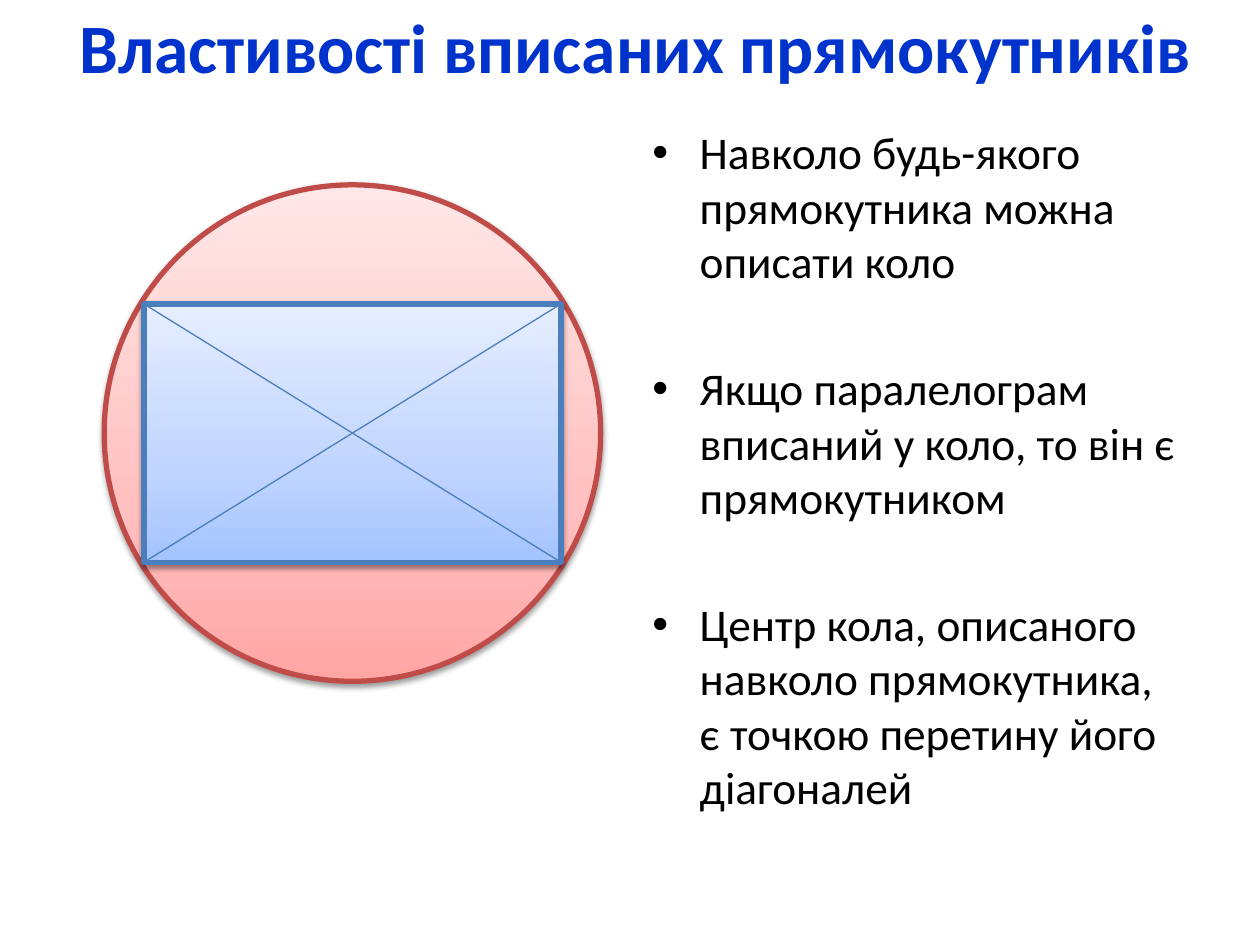
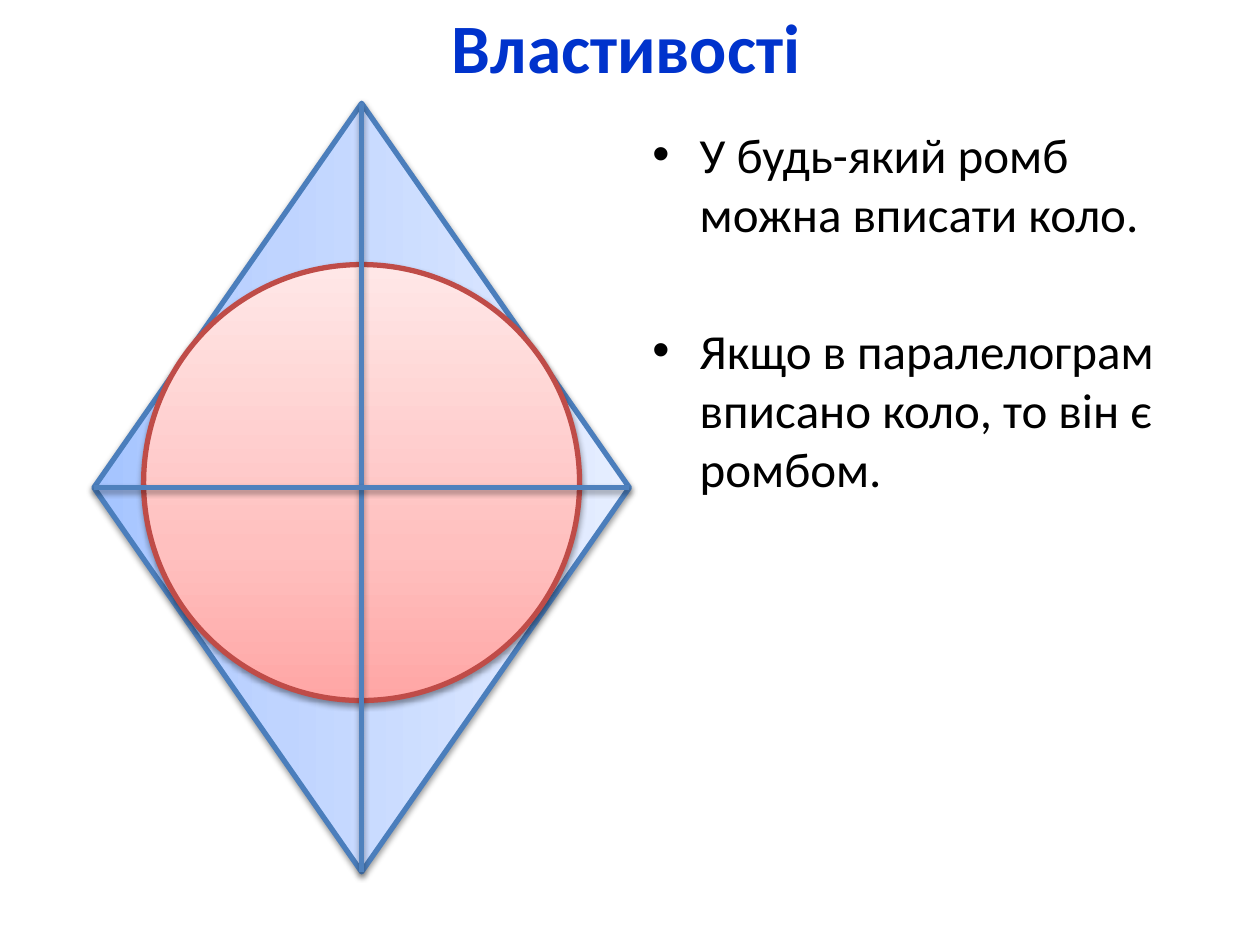
from lxml import etree
from pptx import Presentation
from pptx.dml.color import RGBColor
from pptx.enum.shapes import MSO_CONNECTOR as Connector, MSO_SHAPE as Preset
from pptx.enum.text import MSO_ANCHOR as Anchor, PP_ALIGN as Align
from pptx.oxml.ns import qn
from pptx.util import Pt

FONT = "Calibri"
TITLE_COLOR = "0033CC"
TEXT_COLOR = "000000"
DIAGONAL_COLOR = "4F81BD"
# Outline, then gradient stops as position (%) and colour
RED = ("BF4C48", [(0, "FFA6A5"), (35, "FFC0BF"), (100, "FFE7E7")])
BLUE = ("4B7EBC", [(0, "A4C4FF"), (35, "BFD4FF"), (100, "E6EEFF")])


def color(value):
    return RGBColor.from_string(value)


def add_element(parent, tag, **attributes):
    child = etree.SubElement(parent, qn(tag))
    for name, value in attributes.items():
        child.set(name, str(value))
    return child


def add_color(parent, value):
    return add_element(parent, "a:srgbClr", val=value)


class GeometryDeck:
    def __init__(self):
        self.presentation = Presentation()
        self.presentation.slide_width = Pt(720)
        self.presentation.slide_height = Pt(540)
        self.slide = None

    def new_slide(self):
        layout = self.presentation.slide_layouts[6]
        self.slide = self.presentation.slides.add_slide(layout)

    def text_frame(self, left, top, width, height, anchor):
        box = self.slide.shapes.add_textbox(Pt(left), Pt(top), Pt(width), Pt(height))
        frame = box.text_frame
        frame.word_wrap = True
        frame.vertical_anchor = anchor
        return frame

    def run(self, paragraph, text, size, text_color, bold=False):
        run = paragraph.add_run()
        run.text = text
        font = run.font
        font.name, font.size, font.bold = FONT, Pt(size), bold
        font.color.rgb = color(text_color)

    def title(self, text, left, width):
        paragraph = self.text_frame(left, 0, width, 52, Anchor.MIDDLE).paragraphs[0]
        paragraph.alignment = Align.CENTER
        self.run(paragraph, text, 39.6, TITLE_COLOR, bold=True)

    def bullets(self, items, size):
        frame = self.text_frame(365.76, 67.68, 317.52, 414.72, Anchor.TOP)
        for index, item in enumerate(items):
            paragraph = frame.add_paragraph() if index else frame.paragraphs[0]
            if index:
                paragraph.space_before = Pt(1.6 * size)
            properties = paragraph._p.get_or_add_pPr()
            properties.set("marL", str(Pt(27)))
            properties.set("indent", str(-Pt(27)))
            add_element(properties, "a:buFont", typeface="Arial")
            add_element(properties, "a:buChar", char="•")
            self.run(paragraph, item, size, TEXT_COLOR)

    def shadow(self, effects, opacity, distance):
        outer = add_element(effects, "a:outerShdw", blurRad=Pt(3.1), dist=Pt(distance),
                            dir=90 * 60000, rotWithShape=0)
        add_element(add_color(outer, "000000"), "a:alpha", val=opacity * 1000)

    def figure(self, preset, center, width, height, palette, rotation=0):
        """Add a shaded shape around its center."""
        outline, stops = palette
        x, y = center
        shape = self.slide.shapes.add_shape(
            preset, Pt(x - width / 2), Pt(y - height / 2), Pt(width), Pt(height))
        shape.rotation = rotation
        shape.fill.gradient()
        shape.fill.gradient_angle = 90
        stop_list = shape._element.spPr.find(".//" + qn("a:gsLst"))
        for stop in list(stop_list):
            stop_list.remove(stop)
        for position, value in stops:
            add_color(add_element(stop_list, "a:gs", pos=position * 1000), value)
        shape.line.color.rgb = color(outline)
        shape.line.width = Pt(3)
        shape.shadow.inherit = False
        self.shadow(shape._element.spPr.find(qn("a:effectLst")), 38, 1.6)

    def line(self, start, end, line_color, width, shaded=False):
        points = [Pt(value) for value in (*start, *end)]
        connector = self.slide.shapes.add_connector(Connector.STRAIGHT, *points)
        connector.line.color.rgb = color(line_color)
        connector.line.width = Pt(width)
        effects = add_element(connector._element.spPr, "a:effectLst")
        if shaded:
            self.shadow(effects, 35, 1.8)


def rectangle_slide(deck):
    deck.new_slide()
    deck.title("Властивості вписаних прямокутників", 20.16, 686.16)
    deck.bullets([
        "Навколо будь-якого прямокутника можна описати коло",
        "Якщо паралелограм вписаний у коло, то він є прямокутником",
        "Центр кола, описаного навколо прямокутника, є точкою перетину його діагоналей",
    ], 25.9)
    center = x, y = 201.4, 247.5
    width, height = 238.32, 147.6
    deck.figure(Preset.OVAL, center, 283.68, 283.68, RED)
    deck.figure(Preset.RECTANGLE, center, width, height, BLUE)
    for rise in (height / 2, -height / 2):
        deck.line((x - width / 2, y - rise), (x + width / 2, y + rise), BLUE[0], 0.75)


def rhombus_slide(deck):
    deck.new_slide()
    deck.title("Властивості", 33.84, 648)
    deck.bullets([
        "У будь-який ромб можна вписати коло.",
        "Якщо в паралелограм вписано коло, то він є ромбом.",
    ], 28)
    center = x, y = 206.64, 278.64
    long_diagonal, short_diagonal = 439.2, 306
    deck.figure(Preset.FLOWCHART_DECISION, center, long_diagonal, short_diagonal,
                BLUE, rotation=90)
    deck.figure(Preset.OVAL, (x, 275.76), 249.12, 249.12, RED)
    for dx, dy in ((0, long_diagonal / 2), (short_diagonal / 2, 0)):
        deck.line((x - dx, y - dy), (x + dx, y + dy), DIAGONAL_COLOR, 3, shaded=True)


def main():
    deck = GeometryDeck()
    rectangle_slide(deck)
    rhombus_slide(deck)
    deck.presentation.save("out.pptx")


if __name__ == "__main__":
    main()
